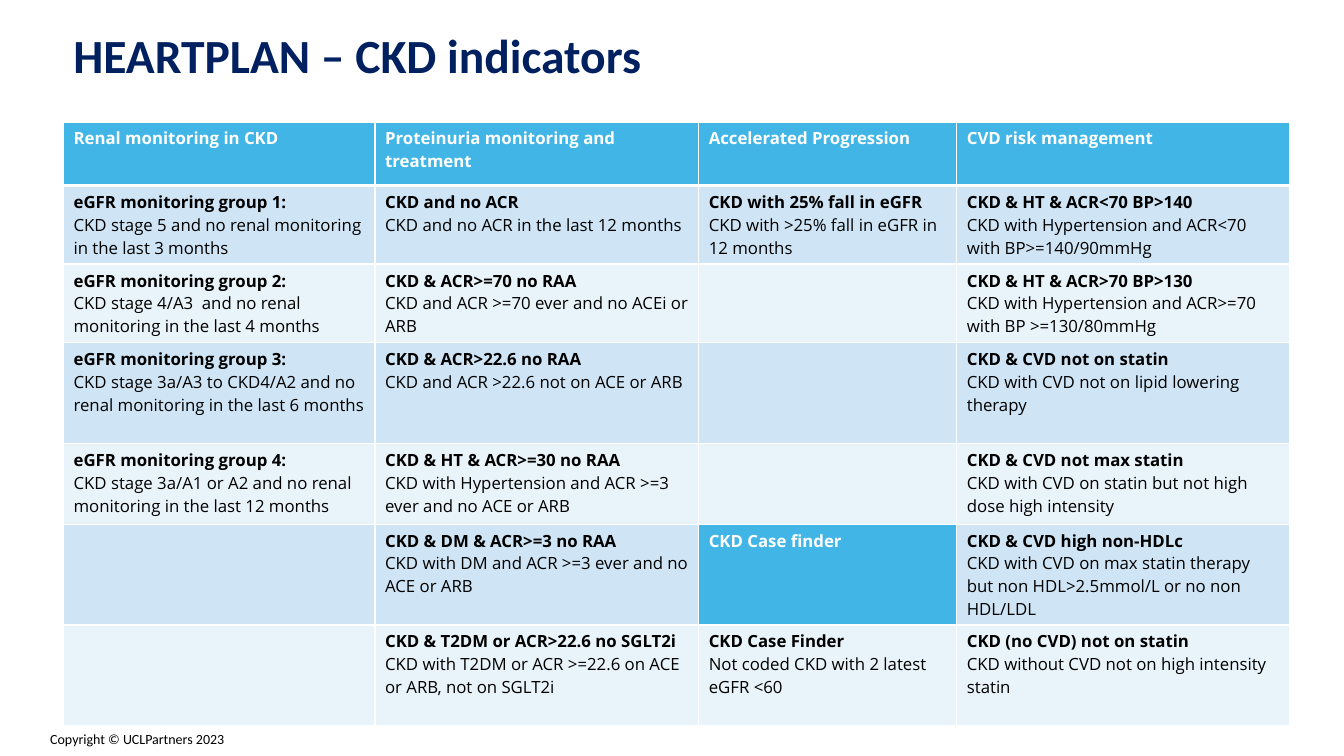
from lxml import etree
from pptx import Presentation
from pptx import util as u
from pptx.dml.color import RGBColor
from pptx.enum import text
from pptx.oxml.ns import qn

PX = 9144
NAVY = RGBColor(0x00, 0x20, 0x60)
BLUE = RGBColor(0x41, 0xB6, 0xE6)
MID_BLUE = RGBColor(0xCF, 0xE5, 0xF5)
PALE_BLUE = RGBColor(0xE9, 0xF3, 0xFA)
WHITE = RGBColor(0xFF, 0xFF, 0xFF)
BLACK = RGBColor(0x00, 0x00, 0x00)

COLUMN_WIDTHS = [309, 321, 256, 330]
ROW_HEIGHTS = [63, 78, 78, 100, 80, 100, 100]
HEADINGS = [
    "Renal monitoring in CKD",
    "Proteinuria monitoring and treatment",
    "Accelerated Progression",
    "CVD risk management",
]
CASE_FINDER = ("CKD Case finder",)
INDICATORS = [
    [
        ("eGFR monitoring group 1:", "CKD stage 5 and no renal monitoring in the last 3 months"),
        ("CKD and no ACR", "CKD and no ACR in the last 12 months"),
        ("CKD with 25% fall in eGFR", "CKD with >25% fall in eGFR in 12 months"),
        ("CKD & HT & ACR<70 BP>140", "CKD with Hypertension and ACR<70 with BP>=140/90mmHg"),
    ],
    [
        ("eGFR monitoring group 2:", "CKD stage 4/A3  and no renal monitoring in the last 4 months"),
        ("CKD & ACR>=70 no RAA", "CKD and ACR >=70 ever and no ACEi or ARB"),
        (),
        ("CKD & HT & ACR>70 BP>130", "CKD with Hypertension and ACR>=70 with BP >=130/80mmHg"),
    ],
    [
        ("eGFR monitoring group 3:", "CKD stage 3a/A3 to CKD4/A2 and no renal monitoring in the last 6 months"),
        ("CKD & ACR>22.6 no RAA", "CKD and ACR >22.6 not on ACE or ARB"),
        (),
        ("CKD & CVD not on statin", "CKD with CVD not on lipid lowering therapy"),
    ],
    [
        ("eGFR monitoring group 4:", "CKD stage 3a/A1 or A2 and no renal monitoring in the last 12 months"),
        ("CKD & HT & ACR>=30 no RAA", "CKD with Hypertension and ACR >=3 ever and no ACE or ARB"),
        (),
        ("CKD & CVD not max statin", "CKD with CVD on statin but not high dose high intensity"),
    ],
    [
        (),
        ("CKD & DM & ACR>=3 no RAA", "CKD with DM and ACR >=3 ever and no ACE or ARB"),
        CASE_FINDER,
        ("CKD & CVD high non-HDLc", "CKD with CVD on max statin therapy but non HDL>2.5mmol/L or no non HDL/LDL"),
    ],
    [
        (),
        ("CKD & T2DM or ACR>22.6 no SGLT2i", "CKD with T2DM or ACR >=22.6 on ACE or ARB, not on SGLT2i"),
        ("CKD Case Finder", "Not coded CKD with 2 latest eGFR <60"),
        ("CKD (no CVD) not on statin", "CKD without CVD not on high intensity statin"),
    ],
]


def px(*lengths):
    return [length * PX for length in lengths]


def add_run(paragraph, words, font, size, color, bold=False):
    run = paragraph.add_run()
    run.text = words
    run.font.name = font
    run.font.size = u.Pt(size)
    run.font.color.rgb = color
    run.font.bold = bold


def add_label(slide, box, words, size, color, bold=False, wrap=True):
    frame = slide.shapes.add_textbox(*px(*box)).text_frame
    frame.word_wrap = wrap
    frame.vertical_anchor = text.MSO_ANCHOR.MIDDLE
    add_run(frame.paragraphs[0], words, "Calibri", size, color, bold)
    return frame


def set_borders(cell, top=1, bottom=1):
    properties = cell._tc.get_or_add_tcPr()
    widths = {"a:lnL": 1, "a:lnR": 1, "a:lnT": top, "a:lnB": bottom}
    for position, (tag, width) in enumerate(widths.items()):
        line = etree.Element(qn(tag), w=str(u.Pt(width)))
        fill = etree.SubElement(line, qn("a:solidFill"))
        etree.SubElement(fill, qn("a:srgbClr"), val=str(WHITE))
        properties.insert(position, line)


def fill_cell(cell, lines, background, color):
    cell.fill.solid()
    cell.fill.fore_color.rgb = background
    frame = cell.text_frame
    for index, words in enumerate(lines):
        paragraph = frame.add_paragraph() if index else frame.paragraphs[0]
        add_run(paragraph, words, "Open Sans", 12, color, bold=index == 0)


def add_indicator_table(slide, left, top):
    rows = [[(heading,) for heading in HEADINGS]] + INDICATORS
    box = px(left, top, sum(COLUMN_WIDTHS), sum(ROW_HEIGHTS))
    table = slide.shapes.add_table(len(rows), len(HEADINGS), *box).table
    for column, width in zip(table.columns, COLUMN_WIDTHS):
        column.width = width * PX
    for row, height in zip(table.rows, ROW_HEIGHTS):
        row.height = height * PX
    for r, row in enumerate(rows):
        for c, lines in enumerate(row):
            cell = table.cell(r, c)
            if r == 0 or lines == CASE_FINDER:
                fill_cell(cell, lines, BLUE, WHITE)
            else:
                fill_cell(cell, lines, MID_BLUE if r % 2 else PALE_BLUE, BLACK)
            set_borders(cell, top=3 if r == 1 else 1, bottom=3 if r == 0 else 1)


def build_indicator_slide(presentation):
    slide = presentation.slides.add_slide(presentation.slide_layouts[6])
    add_label(slide, (40, 720, 196, 27), "Copyright © UCLPartners 2023", 10, BLACK, wrap=False)
    title = add_label(slide, (63, 28, 1039, 60), "HEARTPLAN – CKD indicators", 34, NAVY, bold=True)
    title.paragraphs[0].line_spacing = 0.9
    add_indicator_table(slide, 63, 121)


def main():
    presentation = Presentation()
    presentation.slide_width, presentation.slide_height = px(1333, 750)
    build_indicator_slide(presentation)
    presentation.save("out.pptx")


if __name__ == "__main__":
    main()
